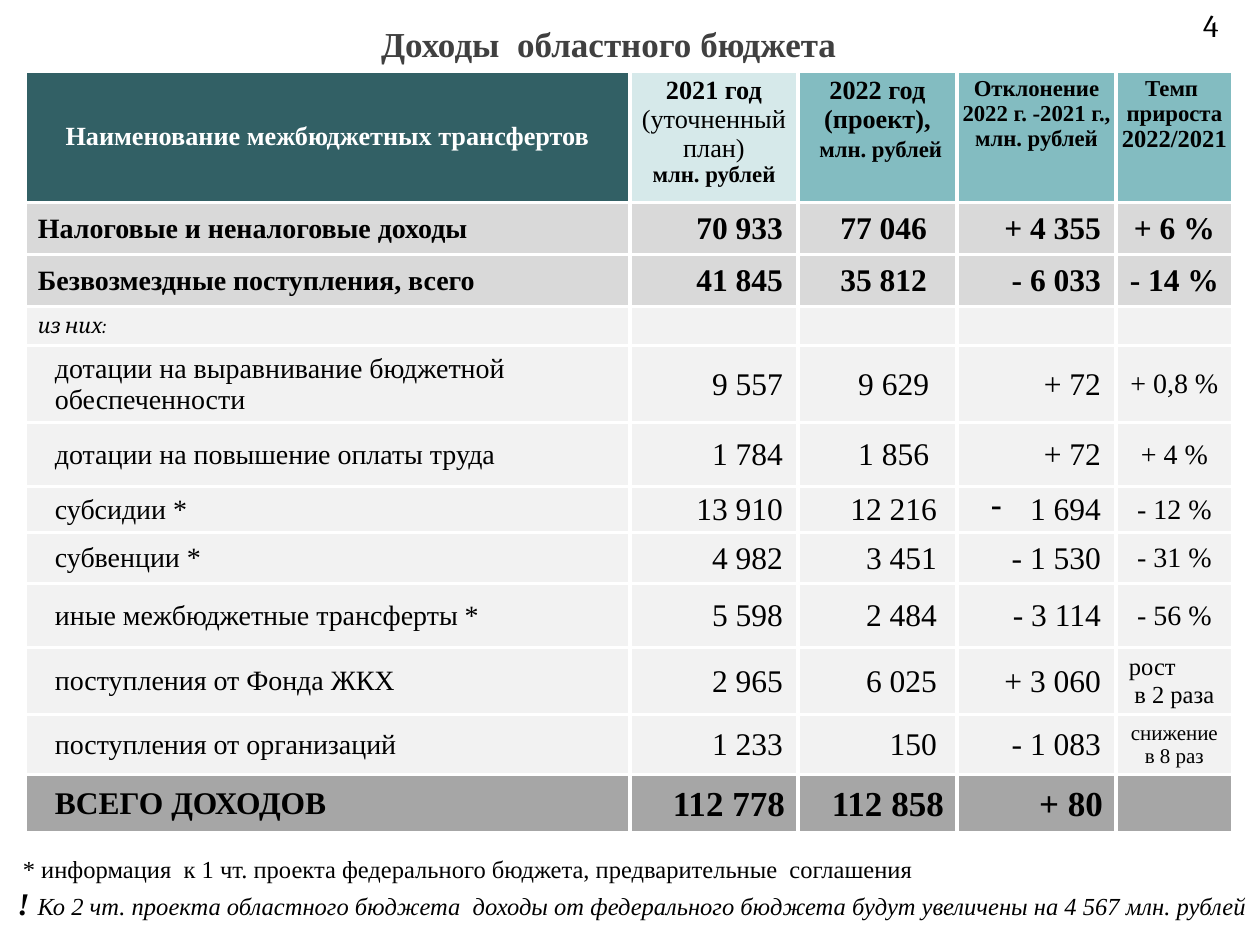
from lxml import etree
from pptx import Presentation
from pptx import util as u
from pptx.dml.color import RGBColor
from pptx.enum import text
from pptx.oxml.ns import qn

PX = 914400 // 126
SERIF, NUMBER_FONT = "Times New Roman", "Cambria"
LEFT, CENTER, RIGHT = text.PP_ALIGN.LEFT, text.PP_ALIGN.CENTER, text.PP_ALIGN.RIGHT
TOP, MIDDLE, BOTTOM = text.MSO_ANCHOR.TOP, text.MSO_ANCHOR.MIDDLE, text.MSO_ANCHOR.BOTTOM

BLACK = RGBColor(0x00, 0x00, 0x00)
WHITE = RGBColor(0xFF, 0xFF, 0xFF)
TITLE_GRAY = RGBColor(0x40, 0x40, 0x40)
DARK_TEAL = RGBColor(0x32, 0x60, 0x65)
PALE_TEAL = RGBColor(0xD6, 0xE9, 0xEA)
TEAL = RGBColor(0x83, 0xBC, 0xC1)
GROUP_GRAY = RGBColor(0xD9, 0xD9, 0xD9)
DETAIL_GRAY = RGBColor(0xF2, 0xF2, 0xF2)
TOTAL_GRAY = RGBColor(0xA6, 0xA6, 0xA6)

COLUMN_WIDTHS = [605, 168, 159, 159, 117]
ROW_HEIGHTS = [123, 52, 52, 38, 75, 64, 46, 51, 64, 67, 60, 58]

# A paragraph is a list of runs; a run is (text, format changes).
UNIT = ("млн. рублей", {"size": 13})
HEADERS = [
    (DARK_TEAL, [[("Наименование межбюджетных трансфертов", {"color": WHITE})]]),
    (PALE_TEAL, [[("2021 год ", {}), ("(уточненный план)", {"bold": False})], [UNIT]]),
    (TEAL, [[("2022 год", {})], [("(проект),", {})], [(" ", {}), UNIT]]),
    (TEAL, [[("Отклонение 2022 г. -2021 г., млн. рублей", {"size": 13})]]),
    (TEAL, [[("Темп  прироста ", {"size": 13}), ("2022/2021", {"size": 14})]]),
]
ROWS = [
    ("group", "Налоговые и неналоговые доходы", "70 933", "77 046", "+ 4 355", "+ 6 %"),
    ("group", "Безвозмездные поступления, всего", "41 845", "35 812", "- 6 033", "- 14 %"),
    ("note", "из них:", "", "", "", ""),
    ("detail", "дотации на выравнивание бюджетной обеспеченности",
     "9 557", "9 629 ", "+ 72", "+ 0,8 %"),
    ("detail", "дотации на повышение оплаты труда", "1 784", "1 856 ", "+ 72", "+ 4 %"),
    ("detail", "субсидии *", "13 910", "12 216", "1 694", "- 12 %"),
    ("detail", "субвенции *", "4 982", "3 451", "- 1 530", "- 31 %"),
    ("detail", "иные межбюджетные трансферты *", "5 598", "2 484", "- 3 114", "- 56 %"),
    ("detail", "поступления от Фонда ЖКХ", "2 965", "6 025", "+ 3 060", "рост\nв 2 раза"),
    ("detail", "поступления от организаций", "1 233", "150", "- 1 083", "снижение в 8 раз"),
    ("total", "ВСЕГО ДОХОДОВ", "112 778", "112 858", "+ 80", ""),
]
BULLETED_CELL = (6, 3)
GROWTH_CELL = (9, 4)
GROWTH_SIZES = {9: 14, 10: 12}
STYLES = {
    "group": dict(fill=GROUP_GRAY, bold=True, sizes=(16, 18, 18), indent=13, rights=(15, 30, 15)),
    "note": dict(fill=DETAIL_GRAY, bold=False, sizes=(12, 12, 12), indent=13, rights=(0, 0, 0)),
    "detail": dict(fill=DETAIL_GRAY, bold=False, sizes=(16, 18, 16), indent=30, rights=(15, 20, 15)),
    "total": dict(fill=TOTAL_GRAY, bold=True, sizes=(18, 20, 20), indent=30, rights=(13, 13, 13)),
}
FOOTNOTES = [
    [(" ", {"font": NUMBER_FONT}),
     ("* информация  к 1 чт. проекта федерального бюджета, предварительные  соглашения", {})],
    [("! ", {"size": 18, "bold": True, "italic": True}),
     ("Ко 2 чт. проекта областного бюджета  доходы от федерального бюджета "
      "будут увеличены на 4 567 млн. рублей", {"italic": True})],
]


def px(length):
    return u.Emu(length * PX)


def write(frame, content, align=LEFT, **base):
    """Fill a frame with a plain string (one paragraph a line) or lists of runs."""
    if isinstance(content, str):
        content = [[(line, {})] for line in content.split("\n")]
    for index, runs in enumerate(content):
        paragraph = frame.add_paragraph() if index else frame.paragraphs[0]
        paragraph.alignment = align
        for words, changes in runs:
            style = {"font": SERIF, "size": 14, "color": BLACK, "bold": False,
                     "italic": False, **base, **changes}
            run = paragraph.add_run()
            run.text = words
            run.font.name = style["font"]
            run.font.size = u.Pt(style["size"])
            run.font.bold = style["bold"]
            run.font.italic = style["italic"]
            run.font.color.rgb = style["color"]


def add_text(slide, box, content, anchor=TOP, **style):
    frame = slide.shapes.add_textbox(*map(px, box)).text_frame
    frame.word_wrap = True
    frame.vertical_anchor = anchor
    write(frame, content, **style)


def format_cell(cell, fill, margins, anchor=MIDDLE):
    """Set fill, white borders and margins (left, top, right, bottom)."""
    cell.vertical_anchor = anchor
    cell.margin_left, cell.margin_top, cell.margin_right, cell.margin_bottom = map(px, margins)
    properties = cell._tc.get_or_add_tcPr()
    for side in ("lnL", "lnR", "lnT", "lnB"):
        line = etree.SubElement(properties, qn(f"a:{side}"), w=str(u.Pt(2.25)))
        solid = etree.SubElement(line, qn("a:solidFill"))
        etree.SubElement(solid, qn("a:srgbClr"), val=str(WHITE))
    cell.fill.solid()
    cell.fill.fore_color.rgb = fill


def add_dash_bullet(paragraph, hanging):
    properties = paragraph._p.get_or_add_pPr()
    properties.set("marL", str(px(hanging)))
    properties.set("indent", str(-px(hanging)))
    etree.SubElement(properties, qn("a:buChar"), char="-")


def fill_row(table, row, kind, *values):
    style = STYLES[kind]
    name_size, value_size, growth_size = style["sizes"]
    for column, value in enumerate(values):
        cell = table.cell(row, column)
        if column == 0:
            margins, align, size = (style["indent"], 5, 13, 5), LEFT, name_size
        elif column < 4:
            margins, align, size = (1, 1, style["rights"][column - 1], 0), RIGHT, value_size
        else:
            side = 13 if row in GROWTH_SIZES else 1
            margins, align = (side, 0, side, 0), CENTER
            size = GROWTH_SIZES.get(row, growth_size)
        format_cell(cell, style["fill"], margins)
        if value:
            note = kind == "note"
            write(cell.text_frame, value, align=align, size=size, bold=style["bold"],
                  italic=note, font=NUMBER_FONT if note else SERIF)


def add_income_table(slide):
    table = slide.shapes.add_table(
        len(ROW_HEIGHTS), len(COLUMN_WIDTHS), px(25), px(71),
        px(sum(COLUMN_WIDTHS)), px(sum(ROW_HEIGHTS))).table
    for column, width in zip(table.columns, COLUMN_WIDTHS):
        column.width = px(width)
    for row, height in zip(table.rows, ROW_HEIGHTS):
        row.height = px(height)
    for column, (fill, content) in enumerate(HEADERS):
        cell = table.cell(0, column)
        format_cell(cell, fill, (5, 5, 5, 5), TOP if column else MIDDLE)
        write(cell.text_frame, content, align=CENTER, size=15, bold=True)
    for row, values in enumerate(ROWS, start=1):
        fill_row(table, row, *values)
    add_dash_bullet(table.cell(*BULLETED_CELL).text_frame.paragraphs[0], 39)
    table.cell(*GROWTH_CELL).text_frame.paragraphs[0].alignment = LEFT


def main():
    presentation = Presentation()
    presentation.slide_width, presentation.slide_height = px(1260), px(945)
    slide = presentation.slides.add_slide(presentation.slide_layouts[6])
    add_text(slide, (1126, 0, 105, 50), "4", BOTTOM, align=RIGHT, size=18, font=NUMBER_FONT)
    add_income_table(slide)
    add_text(slide, (5, 14, 1216, 59), "Доходы  областного бюджета ", MIDDLE,
             align=CENTER, size=20, bold=True, color=TITLE_GRAY)
    add_text(slide, (5, 848, 1255, 81), FOOTNOTES)
    presentation.save("out.pptx")


if __name__ == "__main__":
    main()
